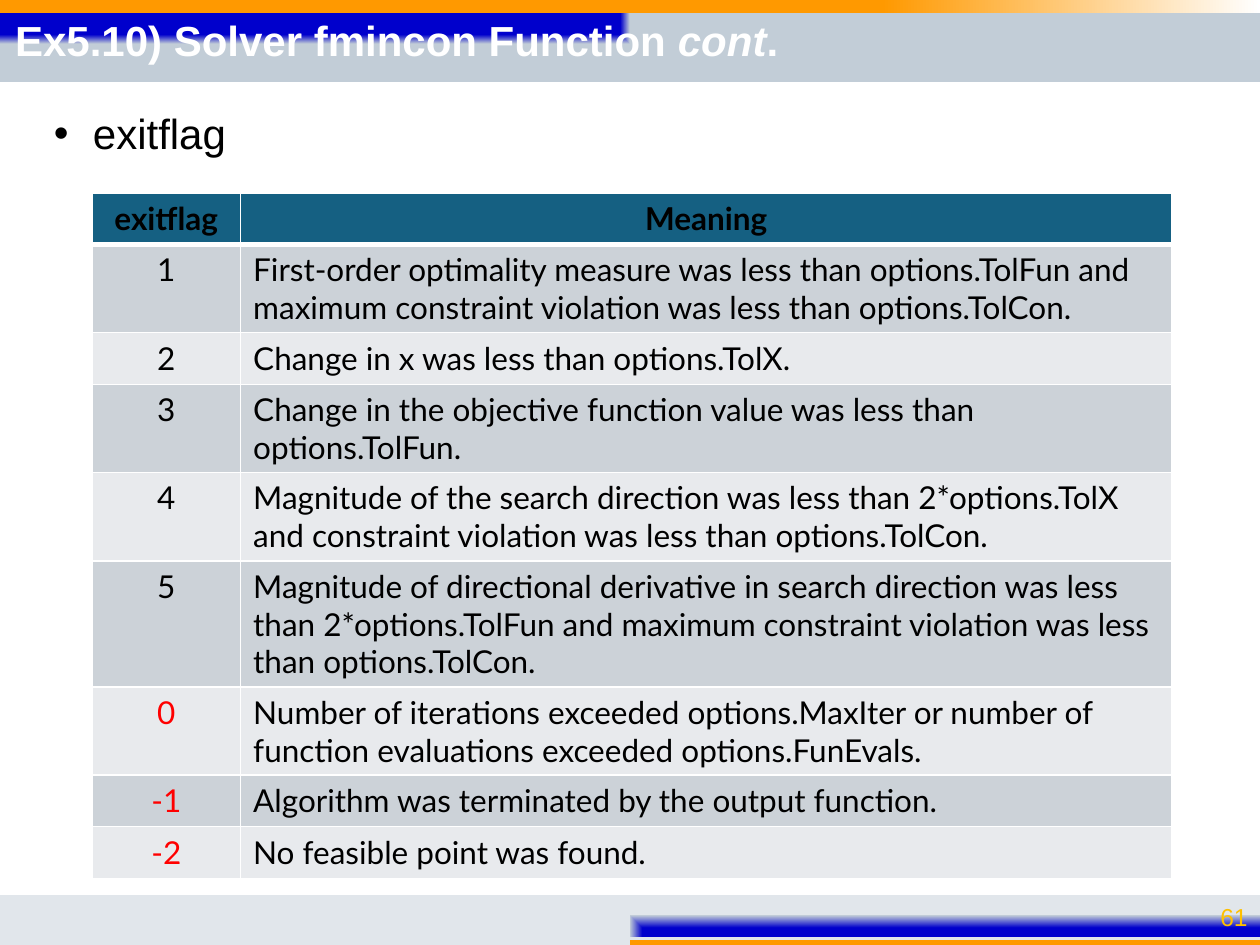
import lxml.etree
import pptx
import pptx.dml.color
import pptx.enum.shapes
import pptx.enum.text
import pptx.oxml.ns
import pptx.util

Inches = pptx.util.Inches
Pt = pptx.util.Pt
qn = pptx.oxml.ns.qn
Align = pptx.enum.text.PP_ALIGN
Anchor = pptx.enum.text.MSO_ANCHOR

COLORS = {
    "blue": "0000CC", "orange": "FF9900", "gray": "C2CDD7", "pale": "E1E6EB",
    "white": "FFFFFF", "black": "000000", "red": "FF0000", "gold": "FFC000",
    "header": "156082", "odd": "CCD2D8", "even": "E8EAED",
}

FLAGS = [
    ("1", "First-order optimality measure was less than options.TolFun and "
          "maximum constraint violation was less than options.TolCon."),
    ("2", "Change in x was less than options.TolX."),
    ("3", "Change in the objective function value was less than options.TolFun."),
    ("4", "Magnitude of the search direction was less than 2*options.TolX\n"
          "and constraint violation was less than options.TolCon."),
    ("5", "Magnitude of directional derivative in search direction was less than "
          "2*options.TolFun and maximum constraint violation was less than options.TolCon."),
    ("0", "Number of iterations exceeded options.MaxIter or number of "
          "function evaluations exceeded options.FunEvals."),
    ("-1", "Algorithm was terminated by the output function."),
    ("-2", "No feasible point was found."),
]


def add_xml(parent, tag, **attributes):
    return lxml.etree.SubElement(parent, qn(tag), attributes)


class SlideBuilder:
    def __init__(self, deck):
        self.slide = deck.slides.add_slide(deck.slide_layouts[5])
        self.font = "Arial"
        self.table_font = "Lato"

    def color(self, name):
        return pptx.dml.color.RGBColor.from_string(COLORS[name])

    def style(self, para, size, color, font=None, bold=False, align=Align.LEFT):
        para.alignment = align
        para.font.name = font or self.font
        para.font.size = Pt(size)
        para.font.bold = bold
        para.font.color.rgb = self.color(color)

    def bar(self, top, height, stops, corner=None):
        bar = self.slide.shapes.add_shape(
            pptx.enum.shapes.MSO_SHAPE.RECTANGLE, 0, Inches(top), Inches(10), Inches(height))
        bar.shadow.inherit = False
        bar.line.fill.background()
        bar.fill.gradient()
        gradient = bar.element.spPr.find(qn("a:gradFill"))
        for child in list(gradient):
            gradient.remove(child)
        stop_list = add_xml(gradient, "a:gsLst")
        for position, name in stops:
            stop = add_xml(stop_list, "a:gs", pos=str(position * 1000))
            add_xml(stop, "a:srgbClr", val=COLORS[name])
        if corner:
            focus = add_xml(gradient, "a:path", path="rect")
            add_xml(focus, "a:fillToRect", **{side: "100000" for side in corner})
        else:
            add_xml(gradient, "a:lin", ang="0", scaled="0")

    def title(self, spans):
        title = self.slide.shapes.title
        self.slide.shapes.element.append(title.element)
        title.left, title.top = Inches(0.02), Inches(0.11)
        title.width, title.height = Inches(9.98), Inches(0.46)
        title.text_frame.vertical_anchor = Anchor.MIDDLE
        para = title.text_frame.paragraphs[0]
        self.style(para, 24, "white", bold=True)
        para.line_spacing = 0.9
        for text, italic in spans:
            span = para.add_run()
            span.text = text
            span.font.italic = italic

    def text(self, text, left, top, width, height, size, color, align=Align.LEFT, anchor=Anchor.TOP):
        box = self.slide.shapes.add_textbox(Inches(left), Inches(top), Inches(width), Inches(height))
        box.text_frame.word_wrap = True
        box.text_frame.vertical_anchor = anchor
        para = box.text_frame.paragraphs[0]
        para.text = text
        self.style(para, size, color, align=align)
        return para

    def bullet(self, text, *place):
        para = self.text(text, *place, 24, "black")
        para.line_spacing = 0.9
        properties = para._p.get_or_add_pPr()
        properties.set("marL", str(Inches(0.31)))
        properties.set("indent", str(-Inches(0.31)))
        add_xml(properties, "a:buFont", typeface=self.font)
        properties.insert_element_before(
            add_xml(properties, "a:buChar", char="•"), "a:defRPr")
        properties.insert_element_before(properties.find(qn("a:buFont")), "a:buChar")

    def cell(self, cell, text, fill, color="black", bold=False, align=Align.LEFT, top=1, bottom=1):
        properties = cell._tc.get_or_add_tcPr()
        for side, width in (("L", 1), ("R", 1), ("T", top), ("B", bottom)):
            line = add_xml(properties, "a:ln" + side, w=str(Pt(width)))
            add_xml(add_xml(line, "a:solidFill"), "a:srgbClr", val=COLORS["white"])
        cell.fill.solid()
        cell.fill.fore_color.rgb = self.color(fill)
        cell.text = text
        for para in cell.text_frame.paragraphs:
            self.style(para, 18, color, self.table_font, bold, align)

    def flag_table(self, left, top, widths, row_height, headings, flags):
        count = len(flags) + 1
        table = self.slide.shapes.add_table(
            count, len(widths), Inches(left), Inches(top),
            Inches(sum(widths)), Inches(row_height * count)).table
        for column, width in zip(table.columns, widths):
            column.width = Inches(width)
        for row in table.rows:
            row.height = Inches(row_height)
        for index, heading in enumerate(headings):
            self.cell(table.cell(0, index), heading, "header", bold=True, align=Align.CENTER, bottom=3)
        for index, (flag, meaning) in enumerate(flags, 1):
            fill = "odd" if index % 2 else "even"
            top_line = 3 if index == 1 else 1
            flag_color = "black" if int(flag) > 0 else "red"
            self.cell(table.cell(index, 0), flag, fill, flag_color, align=Align.CENTER, top=top_line)
            self.cell(table.cell(index, 1), meaning, fill, top=top_line)


def main():
    deck = pptx.Presentation()
    deck.slide_width, deck.slide_height = Inches(10), Inches(7.5)
    page = SlideBuilder(deck)
    page.bar(0.05, 0.6, [(25, "blue"), (75, "blue"), (100, "gray")], "rb")
    page.bar(0, 0.1, [(46, "orange"), (70, "orange"), (100, "white"), (100, "pale")])
    page.bar(7.42, 0.08, [(50, "orange"), (93, "orange"), (100, "white"), (100, "pale")], "lt")
    page.bar(7.1, 0.33, [(40, "blue"), (100, "gray"), (100, "pale")], "lt")
    page.text("61", 9.24, 7.13, 0.76, 0.29, 14, "gold", Align.RIGHT, Anchor.MIDDLE)
    page.bullet("exitflag", 0.33, 0.85, 9.33, 0.51)
    page.title([("Ex5.10) Solver fmincon Function ", False), ("cont", True), (".", False)])
    page.flag_table(0.73, 1.53, [1.18, 7.39], 0.41, ["exitflag", "Meaning"], FLAGS)
    deck.save("out.pptx")


if __name__ == "__main__":
    main()
